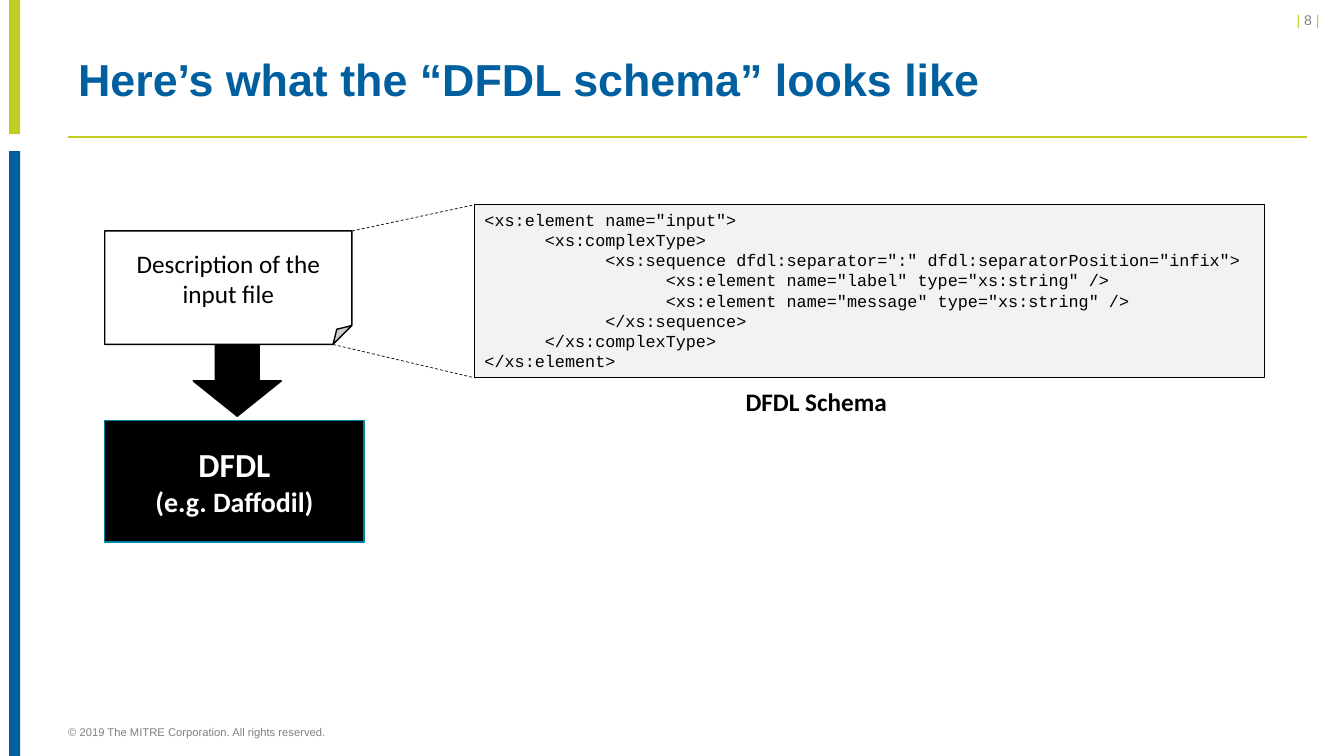
import pptx
import pptx.util
import pptx.dml.color
import pptx.enum.dml
import pptx.enum.shapes
import pptx.enum.text
from lxml import etree

Cm, Pt = pptx.util.Cm, pptx.util.Pt
RGB = pptx.dml.color.RGBColor
SHAPE = pptx.enum.shapes.MSO_SHAPE
ALIGN = pptx.enum.text.PP_ALIGN
ANCHOR = pptx.enum.text.MSO_ANCHOR

LIME = RGB(0xC1, 0xCD, 0x23)
BLUE = RGB(0x00, 0x5F, 0x9E)
TEAL = RGB(0x00, 0x84, 0xA3)
GREY = RGB(0x80, 0x80, 0x80)
PALE = RGB(0xF2, 0xF2, 0xF2)
BLACK = RGB(0, 0, 0)
WHITE = RGB(0xFF, 0xFF, 0xFF)

# Content
TITLE = "Here’s what the “DFDL schema” looks like"
COPYRIGHT = "© 2019 The MITRE Corporation. All rights reserved."
PAGE_NUMBER = [("| ", LIME), ("8 ", GREY), ("| ", LIME)]
NOTE = "Description of the input file"
PROCESSOR = [("DFDL", 24), ("(e.g. Daffodil)", 20)]
CAPTION = "DFDL Schema"
SCHEMA = """<xs:element name="input">
      <xs:complexType>
            <xs:sequence dfdl:separator=":" dfdl:separatorPosition="infix">
                  <xs:element name="label" type="xs:string" />
                  <xs:element name="message" type="xs:string" />
            </xs:sequence>
      </xs:complexType>
</xs:element>"""

# Places in cm: left, top, width, height
NOTE_BOX = (2.64, 5.82, 6.23, 2.86)
ARROW_BOX = (4.87, 8.71, 2.22, 1.78)
PROCESSOR_BOX = (2.64, 10.59, 6.54, 3.07)
SCHEMA_BOX = (11.96, 5.16, 19.9, 4.36)
FOLD = NOTE_BOX[3] / 6

prs = pptx.Presentation()
prs.slide_width, prs.slide_height = Cm(33.87), Cm(19.05)
s = prs.slides.add_slide(prs.slide_layouts[6])


def add_box(kind, box, fill, line=None, width=1):
    sp = s.shapes.add_shape(kind, *map(Cm, box))
    sp.shadow.inherit = False
    sp.fill.solid()
    sp.fill.fore_color.rgb = fill
    if line is None:
        sp.line.fill.background()
    else:
        sp.line.color.rgb = line
        sp.line.width = Pt(width)
    return sp


def add_line(x1, y1, x2, y2, color, width, dashed=False):
    line = s.shapes.add_connector(pptx.enum.shapes.MSO_CONNECTOR.STRAIGHT,
                                  Cm(x1), Cm(y1), Cm(x2), Cm(y2))
    line.line.color.rgb = color
    line.line.width = Pt(width)
    if dashed:
        line.line.dash_style = pptx.enum.dml.MSO_LINE.DASH
    etree.SubElement(line._element.spPr, pptx.oxml.ns.qn("a:effectLst"))


def style(r, font, size, color, bold=False):
    r.font.name, r.font.size, r.font.bold = font, Pt(size), bold
    r.font.color.rgb = color


def write(sp, text, font, size, color, bold=False, align=ALIGN.LEFT,
          anchor=ANCHOR.TOP, wrap=True):
    tf = sp.text_frame
    tf.text = text
    tf.word_wrap = wrap
    tf.vertical_anchor = anchor
    for p in tf.paragraphs:
        p.alignment = align
        for r in p.runs:
            style(r, font, size, color, bold)
    return tf


def add_text(box, *args, **kwargs):
    return write(s.shapes.add_textbox(*map(Cm, box)), *args, **kwargs)


# Side bars and rule under the title
add_box(SHAPE.RECTANGLE, (0.23, 0, 0.28, 3.38), LIME)
add_box(SHAPE.RECTANGLE, (0.23, 3.81, 0.28, 15.24), BLUE)
add_line(1.72, 3.45, 32.94, 3.45, LIME, 1)

# Page number, title, copyright
tf = add_text((27.66, 0.17, 5.94, 0.69), "", "Arial", 10, GREY)
p = tf.paragraphs[0]
p.alignment = ALIGN.RIGHT
for text, color in PAGE_NUMBER:
    r = p.add_run()
    r.text = text
    style(r, "Arial", 10, color)

tf = add_text((1.72, 1.02, 31.22, 2.08), TITLE, "Arial", 32, BLUE, True,
              anchor=ANCHOR.MIDDLE)
tf.paragraphs[0].line_spacing = 0.9

tf = add_text((1.72, 18.11, 20.93, 0.66), COPYRIGHT, "Arial", 8, GREY,
              anchor=ANCHOR.MIDDLE)
tf.margin_left = tf.margin_top = tf.margin_right = tf.margin_bottom = 0

# Processor, note and arrow between them
sp = add_box(SHAPE.RECTANGLE, PROCESSOR_BOX, BLACK, TEAL)
tf = write(sp, "\n".join(text for text, size in PROCESSOR), "Calibri", 24,
           WHITE, True, ALIGN.CENTER, ANCHOR.MIDDLE)
for p, (text, size) in zip(tf.paragraphs, PROCESSOR):
    p.runs[0].font.size = Pt(size)

sp = add_box(SHAPE.FOLDED_CORNER, NOTE_BOX, WHITE, BLACK)
write(sp, NOTE, "Calibri", 18, BLACK, align=ALIGN.CENTER, anchor=ANCHOR.MIDDLE)
add_box(SHAPE.DOWN_ARROW, ARROW_BOX, BLACK, BLACK)

# Schema code with its caption
sp = add_box(SHAPE.RECTANGLE, SCHEMA_BOX, PALE, BLACK, 0.75)
write(sp, SCHEMA, "Courier New", 12, BLACK)
add_text((18.54, 9.6, 4.11, 1.02), CAPTION, "Calibri", 18, BLACK, True,
         wrap=False)

# Dashed lines that open the note out to the schema
left, top, width, height = NOTE_BOX
code_left, code_top, _, code_height = SCHEMA_BOX
add_line(left + width, top, code_left, code_top, BLACK, 0.5, True)
add_line(left + width - FOLD, top + height,
         code_left, code_top + code_height, BLACK, 0.5, True)

prs.save("out.pptx")
